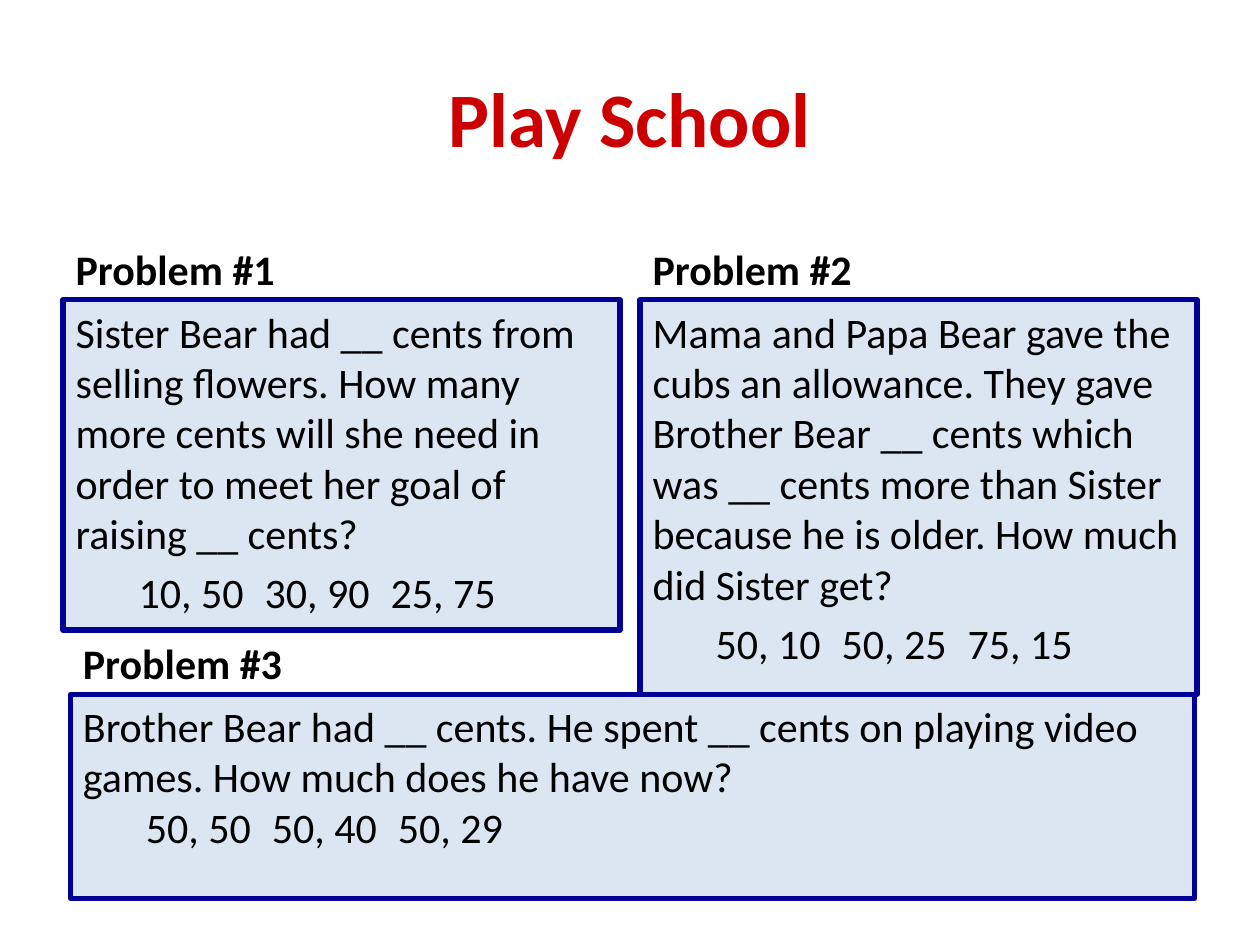
from lxml.etree import SubElement
from pptx import Presentation
from pptx.dml.color import RGBColor
from pptx.enum.shapes import MSO_SHAPE as Kind
from pptx.enum.text import MSO_ANCHOR as Anchor, MSO_AUTO_SIZE as Fit, PP_ALIGN as Align
from pptx.oxml.ns import qn
from pptx.util import Inches, Pt

deck = Presentation()
deck.slide_width, deck.slide_height = Inches(10), Inches(7.5)
slide = deck.slides.add_slide(deck.slide_layouts[4])
title, head1, box1, head2, box2 = slide.placeholders

# Grid: two columns, a row of headings above a row of boxes
LEFT, RIGHT, WIDE = 0.5, 5.08, 4.42
HEAD, BODY, TALL = 1.68, 2.38, 0.7
LOW, BASE = 0.56, 5.51
STEP = 1.29  # from one number pair to the next


def color(code):
    return RGBColor.from_string(code)


def write(shape, place, lines, size=24, ink="000000", bold=False,
          anchor=Anchor.TOP, align=Align.LEFT, gap=5, start=0):
    """Place a shape and fill it; tabs begin at start and repeat by STEP."""
    shape.left, shape.top, shape.width, shape.height = map(Inches, place)
    frame = shape.text_frame
    frame.word_wrap, frame.auto_size = True, Fit.NONE
    frame.vertical_anchor = anchor
    frame.text = "\n".join(lines)
    for i, para in enumerate(frame.paragraphs):
        props = para._p.get_or_add_pPr()
        props.set("marL", "0")
        props.set("indent", "0")
        SubElement(props, qn("a:buNone"))
        if "\t" in para.text:
            tabs = SubElement(props, qn("a:tabLst"))
            for n in range(3):
                SubElement(tabs, qn("a:tab"), pos=str(Inches(start + n * STEP)), algn="l")
        para.alignment = align
        para.space_before = Pt(gap if i else 0)
        font = para.font
        font.name, font.size, font.bold = "Calibri", Pt(size), bold
        font.color.rgb = color(ink)


# Title
write(title, (0.5, 0.3, 9, 1.25), ["Play School"], size=44, ink="CC0000",
      bold=True, anchor=Anchor.MIDDLE, align=Align.CENTER)

# Headings
head3 = slide.shapes.add_textbox(0, 0, 0, 0)
heads = [
    (head1, (LEFT, HEAD, WIDE, TALL)),
    (head2, (RIGHT, HEAD, WIDE, TALL)),
    (head3, (LOW, BASE - 0.5, 2.17, 0.5)),
]
for n, (head, place) in enumerate(heads, 1):
    write(head, place, [f"Problem #{n}"], bold=True, anchor=Anchor.BOTTOM)

# Problems, each with three pairs of numbers to choose from
box3 = slide.shapes.add_shape(Kind.RECTANGLE, 0, 0, 0, 0)
box3.shadow.inherit = False
boxes = [
    (box1, (LEFT, BODY, WIDE, 2.62), 5, 0.41,
     "Sister Bear had __ cents from selling flowers. How many more cents "
     "will she need in order to meet her goal of raising __ cents?",
     ["10, 50", "30, 90", "25, 75"]),
    (box2, (RIGHT, BODY, WIDE, BASE - BODY), 5, 0.41,
     "Mama and Papa Bear gave the cubs an allowance. They gave Brother Bear "
     "__ cents which was __ cents more than Sister because he is older. "
     "How much did Sister get?",
     ["50, 10", "50, 25", "75, 15"]),
    (box3, (LOW, BASE, 8.92, 1.62), 0, 2.65,
     "Brother Bear had __ cents. He spent __ cents on playing video games. "
     "How much does he have now?",
     ["50, 50", "50, 40", "50, 29"]),
]
for box, place, gap, start, text, pairs in boxes:
    row = "".join("\t" + pair for pair in pairs)
    write(box, place, [text, row], gap=gap, start=start)
    box.fill.solid()
    box.fill.fore_color.rgb = color("DCE6F2")
    box.line.color.rgb = color("000099")
    box.line.width = Pt(3)

deck.save("out.pptx")
